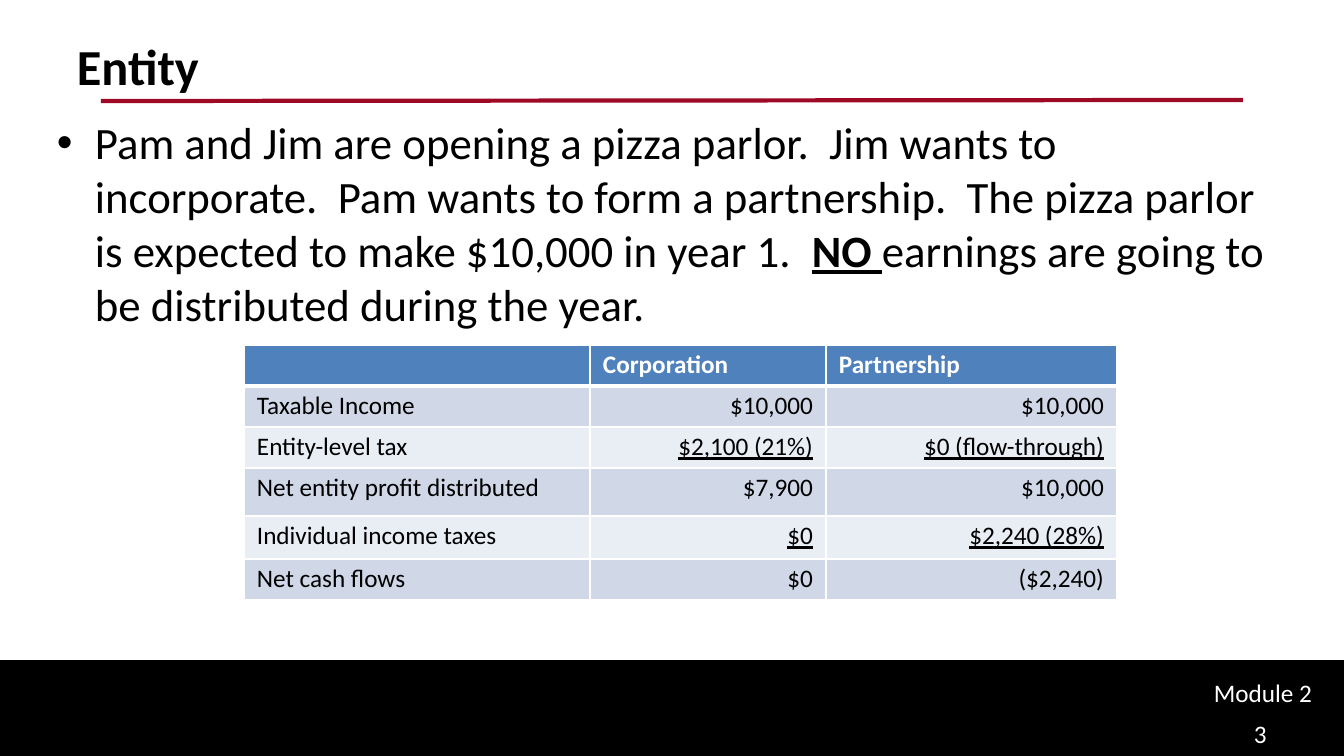
from lxml.etree import SubElement
from pptx import Presentation
from pptx.dml.color import RGBColor
from pptx.enum.shapes import MSO_CONNECTOR, MSO_SHAPE
from pptx.enum.text import PP_ALIGN
from pptx.oxml.ns import qn
from pptx.util import Pt

PX = 914400 / 100.8


def px(*sizes):
    """Turn pixels into EMU."""
    return [round(size * PX) for size in sizes]


def style(font, hue, **format):
    """Set the typeface, the colour and any further font values."""
    font.name = "Calibri"
    font.color.rgb = RGBColor.from_string(hue)
    for key, value in format.items():
        setattr(font, key, value)


deck = Presentation()
deck.slide_width, deck.slide_height = px(1344, 756)
slide = deck.slides.add_slide(deck.slide_layouts[6])
shapes = slide.shapes

# Footer band and title rule
band = shapes.add_shape(MSO_SHAPE.RECTANGLE, *px(0, 661, 1344, 95))
band.shadow.inherit = False
band.fill.solid()
band.fill.fore_color.rgb = band.line.color.rgb = RGBColor.from_string("000000")
band.line.width = Pt(2)

rule = shapes.add_connector(MSO_CONNECTOR.STRAIGHT, *px(101, 101, 1243, 100))
rule.line.color.rgb = RGBColor.from_string("9E0926")
rule.line.width = Pt(3)
SubElement(rule._element.spPr, qn("a:effectLst"))

# Text boxes: place, runs, size, colour
story = [
    ("Pam and Jim are opening a pizza parlor.  Jim wants to incorporate.  "
     "Pam wants to form a partnership.  The pizza parlor is expected to make "
     "$10,000 in year 1.  ", {}),
    ("NO ", {"bold": True, "underline": True}),
    ("earnings are going to be distributed during the year.", {}),
]
boxes = [
    ((67, 30, 1210, 126), [("Entity", {"bold": True})], 36, "000000"),
    ((47, 110, 1230, 499), story, 32, "000000"),
    ((1204, 672, 133, 40), [("Module 2", {})], 18, "FFFFFF"),
    ((1244, 713, 92, 43), [("3", {})], 18, "FFFFFF"),
]
for place, runs, size, hue in boxes:
    frame = shapes.add_textbox(*px(*place)).text_frame
    frame.word_wrap = True
    para = frame.paragraphs[0]
    if runs is story:
        props = para._p.get_or_add_pPr()
        indent = px(38)[0]
        props.set("marL", str(indent))
        props.set("indent", str(-indent))
        SubElement(props, qn("a:buFont"), typeface="Arial")
        SubElement(props, qn("a:buChar"), char="•")
    for text, format in runs:
        run = para.add_run()
        run.text = text
        style(run.font, hue, size=Pt(size), **format)

# Tax table
rows = [
    ("", "Corporation", "Partnership"),
    ("Taxable Income", "$10,000", "$10,000"),
    ("Entity-level tax", "$2,100 (21%)", "$0 (flow-through)"),
    ("Net entity profit distributed", "$7,900", "$10,000"),
    ("Individual income taxes", "$0", "$2,240 (28%)"),
    ("Net cash flows", "$0", "($2,240)"),
]
widths = px(346, 236, 291)
heights = px(41, 41, 41, 48, 43, 41)
table = shapes.add_table(len(rows), len(widths), *px(244, 345, 873, 255)).table
for col, width in zip(table.columns, widths):
    col.width = width
for row, height in zip(table.rows, heights):
    row.height = height

for r, texts in enumerate(rows):
    head = r == 0
    for c, text in enumerate(texts):
        cell = table.cell(r, c)
        cell.margin_left, cell.margin_right = px(13, 13)
        cell.margin_top, cell.margin_bottom = px(5, 5)
        props = cell._tc.get_or_add_tcPr()
        for side in "LRTB":
            thick = head and side == "B" or r == 1 and side == "T"
            edge = SubElement(props, qn(f"a:ln{side}"), w=str(Pt(3 if thick else 1)))
            SubElement(SubElement(edge, qn("a:solidFill")), qn("a:srgbClr"), val="FFFFFF")
        cell.fill.solid()
        shade = "4F81BD" if head else "D0D8E8" if r % 2 else "E9EDF4"
        cell.fill.fore_color.rgb = RGBColor.from_string(shade)
        para = cell.text_frame.paragraphs[0]
        para.alignment = PP_ALIGN.RIGHT if c and not head else PP_ALIGN.LEFT
        if text:
            run = para.add_run()
            run.text = text
            style(run.font, "FFFFFF" if head else "000000", size=Pt(18),
                  bold=head, underline=c > 0 and r in (2, 4))

deck.save("out.pptx")
